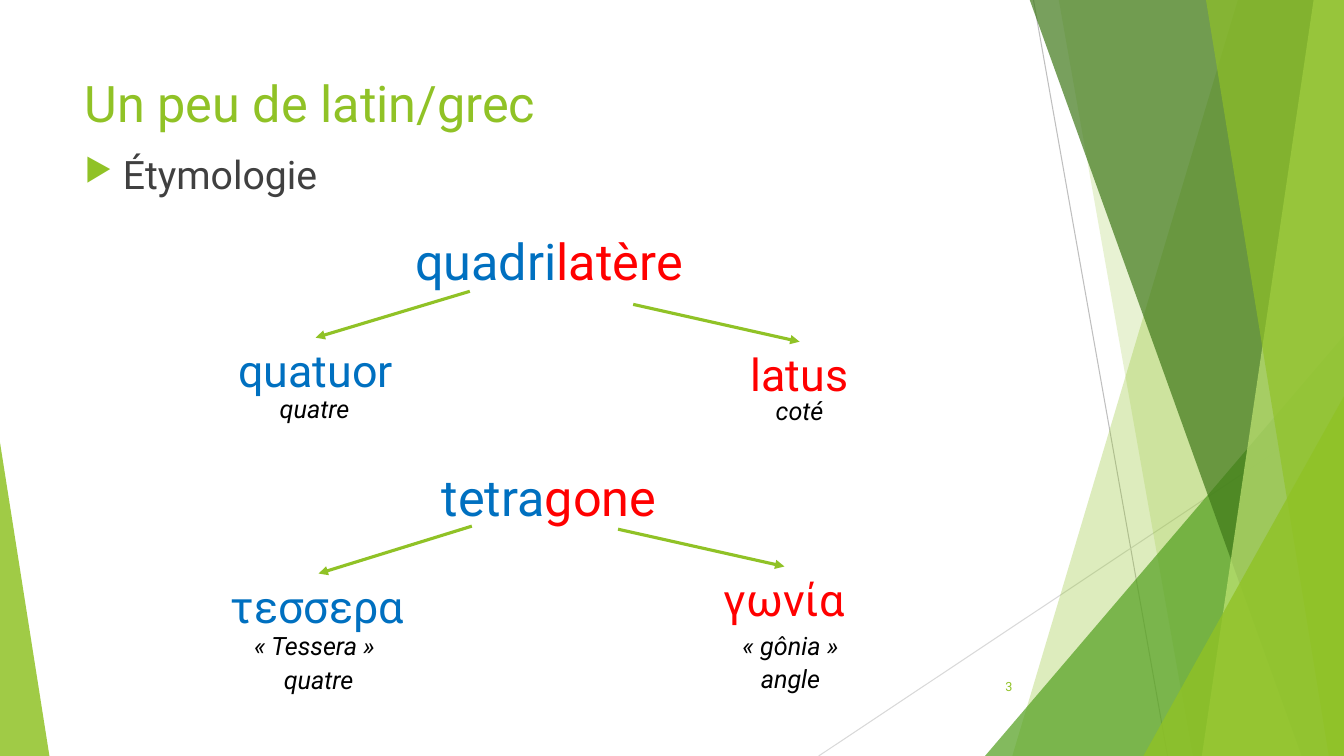
"""Build the slide on the Latin and Greek roots of two geometry words."""
from dataclasses import dataclass

from lxml.etree import SubElement
from pptx import Presentation
from pptx.dml.color import RGBColor
from pptx.enum.shapes import MSO_CONNECTOR as Connector, MSO_SHAPE as Preset
from pptx.enum.text import MSO_ANCHOR as Anchor, PP_ALIGN as Align
from pptx.oxml.ns import qn
from pptx.util import Pt


@dataclass(frozen=True)
class Theme:
    font: str = "Roboto"
    lime: str = "90C226"
    green: str = "54A021"
    forest: str = "3F7819"
    pale: str = "C0E474"
    body: str = "404040"
    blue: str = "0070C0"
    red: str = "FF0000"
    black: str = "000000"
    line: str = "BFBFBF"
    faint_line: str = "D9D9D9"
    heading: int = 36
    root: int = 32
    bullet: int = 28
    gloss: int = 18
    number: int = 9


theme = Theme()
PX = 9144
WIDTH, HEIGHT = 1333, 750

presentation = Presentation()
presentation.slide_width = WIDTH * PX
presentation.slide_height = HEIGHT * PX
slide = presentation.slides.add_slide(presentation.slide_layouts[6])
shapes = slide.shapes


def add_text(box, runs, size, align=Align.CENTER, italic=False, anchor=Anchor.TOP):
    """Add a one-paragraph text box and return its paragraph."""
    frame = shapes.add_textbox(*(length * PX for length in box)).text_frame
    frame.word_wrap = True
    frame.vertical_anchor = anchor
    paragraph = frame.paragraphs[0]
    paragraph.alignment = align
    for text, color in runs:
        run = paragraph.add_run()
        run.text = text
        run.font.name = theme.font
        run.font.size = Pt(size)
        run.font.italic = italic
        run.font.color.rgb = RGBColor.from_string(color)
    return paragraph


def add_line(start, end, color, width, arrow=False):
    """Add a straight line, with an arrowhead at its end if asked."""
    points = (length * PX for length in (*start, *end))
    connector = shapes.add_connector(Connector.STRAIGHT, *points)
    connector.line.color.rgb = RGBColor.from_string(color)
    connector.line.width = Pt(width)
    if arrow:
        SubElement(connector.line._get_or_add_ln(), qn("a:tailEnd"), type="triangle")
    SubElement(connector._element.spPr, qn("a:effectLst"))


add_line((1025, 0), (1158, HEIGHT), theme.line, 0.75)
add_line((WIDTH, 403), (812, HEIGHT), theme.faint_line, 0.75)

# Each band runs from a top x to a bottom x and fills to the right edge.
bands = [
    ("band", (1228, 1004), theme.lime, 30),
    ("band", (1050, 1183), theme.lime, 20),
    ("triangle", (977, 333, 356, 1), theme.green, 72),
    ("band", (1021, 1291), theme.forest, 70),
    ("band", (1303, 1192), theme.pale, 70),
    ("band", (1196, 1318), theme.lime, 65),
    ("triangle", (1134, 393, 199, 1), theme.lime, 80),
    ("triangle", (0, 439, 49, 0), theme.lime, 85),
]
for kind, geometry, color, opacity in bands:
    if kind == "band":
        top_x, bottom_x = geometry
        builder = shapes.build_freeform(top_x, -1, scale=PX)
        builder.add_line_segments([(WIDTH, -1), (WIDTH, HEIGHT), (bottom_x, HEIGHT)])
        shape = builder.convert_to_shape()
    else:
        left, top, width, apex = geometry
        shape = shapes.add_shape(
            Preset.ISOSCELES_TRIANGLE, left * PX, top * PX, width * PX, (HEIGHT - top) * PX
        )
        shape.adjustments[0] = apex
    shape.shadow.inherit = False
    shape.line.fill.background()
    shape.fill.solid()
    shape.fill.fore_color.rgb = RGBColor.from_string(color)
    color_element = shape._element.spPr.find(qn("a:solidFill"))[0]
    SubElement(color_element, qn("a:alpha"), val=str(opacity * 1000))

add_text((74, 67, 940, 144), [("Un peu de latin/grec", theme.lime)], theme.heading, Align.LEFT)

topic = add_text((74, 144, 940, 424), [("Étymologie", theme.body)], theme.bullet, Align.LEFT)
topic.space_before = Pt(10)
properties = topic._p.get_or_add_pPr()
properties.set("marL", str(38 * PX))
properties.set("indent", str(-38 * PX))
bullet_color = SubElement(properties, qn("a:buClr"))
SubElement(bullet_color, qn("a:srgbClr"), val=theme.lime)
SubElement(properties, qn("a:buSzPct"), val="80000")
SubElement(properties, qn("a:buChar"), char="▶")

add_text((939, 661, 75, 40), [("3", theme.lime)], theme.number, Align.RIGHT, anchor=Anchor.MIDDLE)

words = [(223, "quadri", "latère"), (457, "tetra", "gone")]
for top, first, second in words:
    runs = [(first, theme.blue), (second, theme.red)]
    add_text((313, top, 463, 71), runs, theme.heading)

roots = [
    ("quatuor", theme.blue, (196, 335), (466, 289), (313, 335)),
    ("latus", theme.red, (676, 339), (628, 302), (793, 339)),
    ("τεσσερα", theme.blue, (198, 569), (468, 522), (316, 569)),
    ("γωνία", theme.red, (661, 562), (613, 525), (778, 562)),
]
for text, color, corner, start, end in roots:
    add_text((*corner, 234, 64), [(text, color)], theme.root)
    add_line(start, end, theme.lime, 2.25, arrow=True)

glosses = [
    ("coté", 719, 387),
    ("« Tessera »", 238, 620),
    ("quatre", 238, 385),
    ("quatre", 242, 654),
    ("« gônia »", 710, 620),
    ("angle", 710, 653),
]
for text, left, top in glosses:
    add_text((left, top, 148, 40), [(text, theme.black)], theme.gloss, italic=True)

presentation.save("out.pptx")
